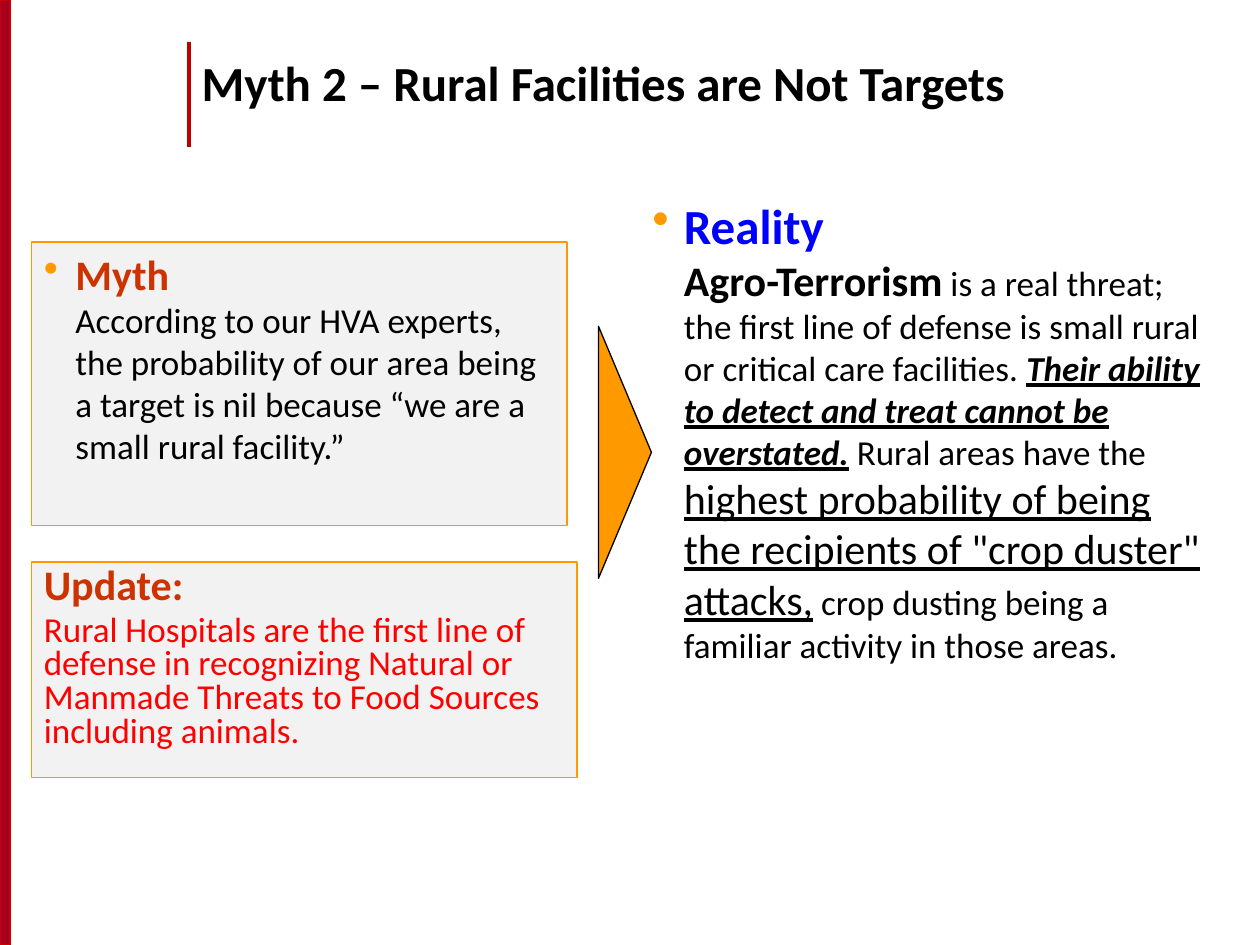
from lxml import etree
from pptx import Presentation
from pptx import util as u
from pptx.dml.color import RGBColor
from pptx.enum import shapes, text
from pptx.oxml.ns import qn

COLORS = {
    "bar": "A50021", "bar_edge": "CC0000", "rule": "C00000", "panel": "F2F2F2",
    "orange": "FF9900", "rust": "CC3300", "blue": "0000FF", "red": "FF0000",
    "black": "000000",
}


def add_block(shape_type, left, top, width, height, fill, line, weight):
    block = slide.shapes.add_shape(
        shape_type, u.Inches(left), u.Inches(top), u.Inches(width), u.Inches(height))
    block.shadow.inherit = False
    block.fill.solid()
    block.fill.fore_color.rgb = RGBColor.from_string(COLORS[fill])
    block.line.color.rgb = RGBColor.from_string(COLORS[line])
    block.line.width = u.Pt(weight)
    return block


def add_span(para, words, size, color="black", bold=False, italic=False, underline=False):
    span = para.add_run()
    span.text = words
    span.font.name = "Calibri"
    span.font.size = u.Pt(size)
    span.font.color.rgb = RGBColor.from_string(COLORS[color])
    span.font.bold = bold
    span.font.italic = italic
    span.font.underline = underline


deck = Presentation()
deck.slide_width = u.Inches(10)
deck.slide_height = u.Inches(7.5)
slide = deck.slides.add_slide(deck.slide_layouts[5])
rectangle = shapes.MSO_SHAPE.RECTANGLE

add_block(rectangle, 0, 0, 0.08, 7.5, "bar", "bar_edge", 1)

rule = slide.shapes.add_connector(
    shapes.MSO_CONNECTOR.STRAIGHT,
    u.Inches(1.5), u.Inches(0.33), u.Inches(1.5), u.Inches(1.17))
rule.line.color.rgb = RGBColor.from_string(COLORS["rule"])
rule.line.width = u.Pt(2.25)
etree.SubElement(rule._element.spPr, qn("a:effectLst"))

title = slide.shapes.title
title.left, title.top = u.Inches(1.5), u.Inches(0.17)
title.width, title.height = u.Inches(8.25), u.Inches(1.03)
title.text_frame.auto_size = text.MSO_AUTO_SIZE.NONE
title.text_frame.vertical_anchor = text.MSO_ANCHOR.MIDDLE
title_para = title.text_frame.paragraphs[0]
title_para.alignment = text.PP_ALIGN.LEFT
title_para.line_spacing = 0.85
add_span(title_para, "Myth 2 – Rural Facilities are Not Targets", 28, bold=True)

myth = add_block(rectangle, 0.25, 1.92, 4.25, 2.25, "panel", "orange", 0.75)
reality = slide.shapes.add_textbox(
    u.Inches(5.08), u.Inches(1.5), u.Inches(4.67), u.Inches(5.25))
update = add_block(rectangle, 0.25, 4.46, 4.33, 1.71, "panel", "orange", 0.75)
for box in (myth, reality, update):
    box.text_frame.word_wrap = True
    box.text_frame.vertical_anchor = text.MSO_ANCHOR.TOP
    box.text_frame.paragraphs[0].alignment = text.PP_ALIGN.LEFT

bulleted = [
    (myth, "Myth", 24, "rust", [
        ("According to our HVA experts, the probability of our area being a target "
         "is nil because “we are a small rural facility.”", 20, {}),
    ]),
    (reality, "Reality", 28, "blue", [
        ("Agro-Terrorism", 24, {"bold": True}),
        (" is a real threat; the first line of defense is small rural or critical "
         "care facilities. ", 20, {}),
        ("Their ability to detect and treat cannot be overstated.", 20,
         {"bold": True, "italic": True, "underline": True}),
        (" Rural areas have the ", 20, {}),
        ("highest probability of being the recipients of \"crop duster\" attacks,", 24,
         {"underline": True}),
        (" crop dusting being a familiar activity in those areas.", 20, {}),
    ]),
]
for box, heading, size, color, spans in bulleted:
    para = box.text_frame.paragraphs[0]
    properties = para._p.get_or_add_pPr()
    properties.set("marL", str(u.Inches(0.25)))
    properties.set("indent", str(u.Inches(-0.25)))
    bullet_color = etree.SubElement(properties, qn("a:buClr"))
    etree.SubElement(bullet_color, qn("a:srgbClr"), val=COLORS["orange"])
    etree.SubElement(properties, qn("a:buChar"), char="•")
    add_span(para, heading, size, color, bold=True)
    para.add_line_break()
    for words, span_size, style in spans:
        add_span(para, words, span_size, **style)

heading_para = update.text_frame.paragraphs[0]
add_span(heading_para, "Update:", 24, "rust", bold=True)
detail_para = update.text_frame.add_paragraph()
detail_para.space_before = u.Pt(4)
add_span(detail_para, "Rural Hospitals are the first line of defense in recognizing Natural or "
         "Manmade Threats to Food Sources including animals.", 20, "red")
for para in (heading_para, detail_para):
    para.alignment = text.PP_ALIGN.LEFT
    para.line_spacing = 0.8

pointer = add_block(shapes.MSO_SHAPE.ISOSCELES_TRIANGLE, 3.96, 3.38, 2, 0.42,
                    "orange", "black", 0.75)
pointer.rotation = 90

deck.save("out.pptx")
